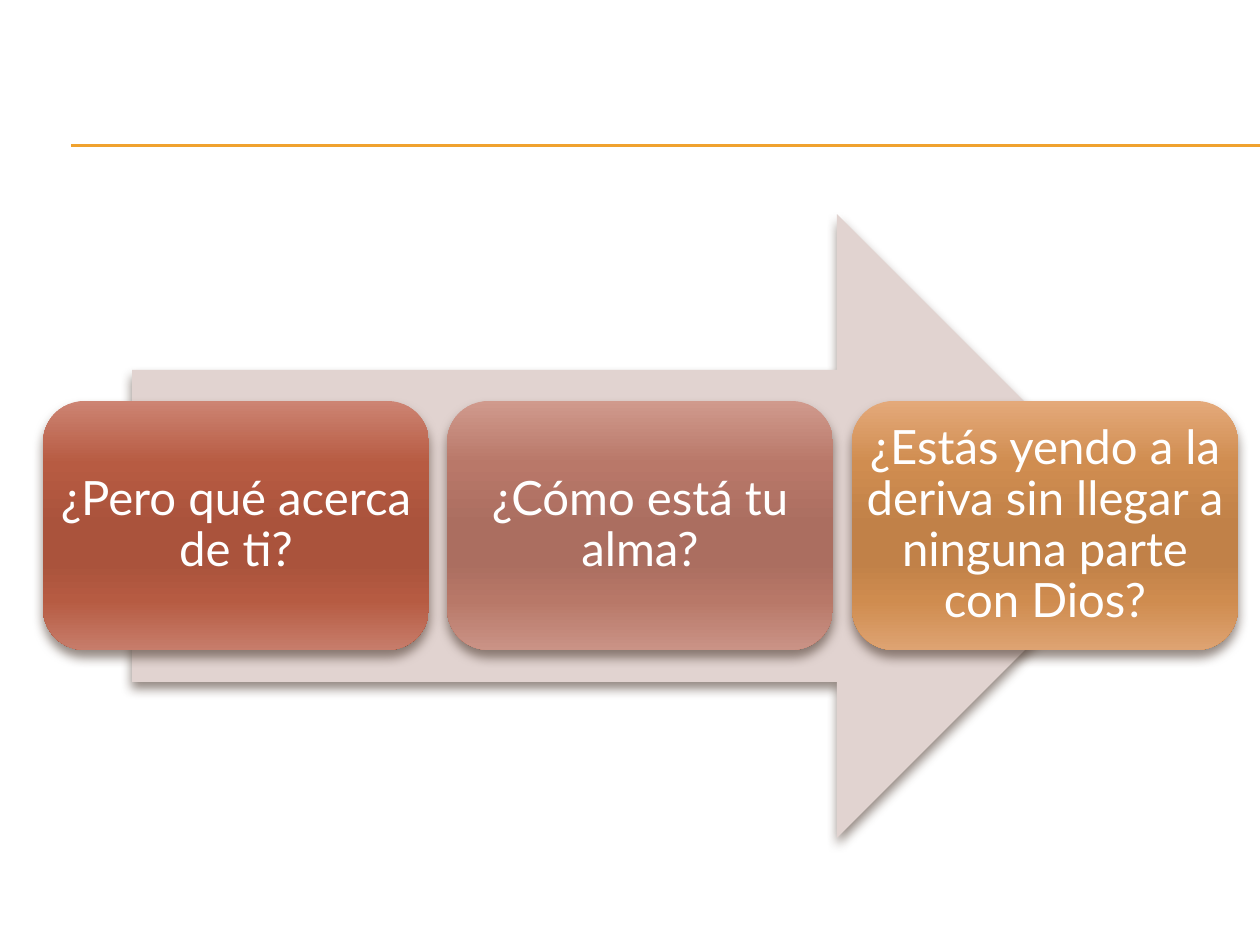
from lxml import etree
from pptx import Presentation
from pptx.dml.color import RGBColor
from pptx.enum.shapes import MSO_CONNECTOR, MSO_SHAPE
from pptx.enum.text import MSO_ANCHOR, PP_ALIGN
from pptx.oxml import parse_xml
from pptx.oxml.ns import nsdecls, qn
from pptx.util import Emu, Pt

LINE = MSO_CONNECTOR.STRAIGHT
ARROW = MSO_SHAPE.RIGHT_ARROW
ROUND = MSO_SHAPE.ROUNDED_RECTANGLE
MIDDLE = MSO_ANCHOR.MIDDLE
CENTER = PP_ALIGN.CENTER

WHITE = RGBColor(0xFF, 0xFF, 0xFF)
GOLD = RGBColor(0xF0, 0xA2, 0x2E)
BLUSH = RGBColor(0xE1, 0xD3, 0xD0)
SHADOW = RGBColor(0x4E, 0x3B, 0x30)
STOPS = (0, 25, 50, 65, 80, 100)
RUST = [RGBColor.from_string(c) for c in
        ("CD8473", "B75B42", "AA533C", "AA533C", "B65B42", "C77D6B")]
ROSE = [RGBColor.from_string(c) for c in
        ("D09A8D", "B97869", "AB6E60", "AB6E60", "B87868", "CA9386")]
AMBER = [RGBColor.from_string(c) for c in
         ("E4A97A", "D08D50", "C18148", "C18148", "CF8C4F", "DEA372")]

QUESTIONS = [
    ("¿Pero qué acerca de ti?", RUST),
    ("¿Cómo está tu alma?", ROSE),
    ("¿Estás yendo a la deriva sin llegar a ninguna parte con Dios?", AMBER),
]


def px(n):
    """Turn slide pixels into EMU."""
    return Emu(round(n * 914400 / 126))


def add_rule(slide, x1, x2, y):
    """Draw a thin horizontal gold line."""
    s = slide.shapes.add_connector(LINE, px(x1), px(y), px(x2), px(y))
    s.line.color.rgb = GOLD
    s.line.width = Pt(0.75)
    etree.SubElement(s._element.spPr, qn("a:effectLst"))


def add_shadow(sp):
    """Give a shape a soft brown shadow below it."""
    sp.shadow.inherit = False
    sp._element.spPr.find(qn("a:effectLst")).append(parse_xml(
        f'<a:outerShdw {nsdecls("a")} blurRad="{Pt(6)}" dist="{Pt(4)}" '
        f'dir="5400000" rotWithShape="0"><a:srgbClr val="{SHADOW}">'
        '<a:alpha val="60000"/></a:srgbClr></a:outerShdw>'))


def fill_gradient(sp, colors):
    """Fill a shape from top to bottom with the given colours."""
    sp.fill.gradient()
    grad = sp._element.spPr.find(qn("a:gradFill"))
    stops = "".join(
        f'<a:gs pos="{pos * 1000}"><a:srgbClr val="{color}"/></a:gs>'
        for pos, color in zip(STOPS, colors))
    grad.getparent().replace(grad, parse_xml(
        f'<a:gradFill {nsdecls("a")} rotWithShape="1"><a:gsLst>{stops}</a:gsLst>'
        '<a:lin ang="5400000" scaled="0"/></a:gradFill>'))


def add_block(slide, kind, x, y, w, h):
    """Add a shape without an outline."""
    sp = slide.shapes.add_shape(kind, px(x), px(y), px(w), px(h))
    sp.line.fill.background()
    return sp


def set_text(sp, text, size=27, color=WHITE, font="Lato", inset=2):
    """Write centred text into a shape."""
    tf = sp.text_frame
    tf.word_wrap = True
    tf.vertical_anchor = MIDDLE
    tf.margin_left = tf.margin_right = px(inset)
    tf.margin_top = tf.margin_bottom = px(inset)
    p = tf.paragraphs[0]
    p.alignment = CENTER
    p.line_spacing = 0.9
    r = p.add_run()
    r.text = text
    r.font.size = Pt(size)
    r.font.name = font
    r.font.color.rgb = color


def add_arrow(slide):
    """Draw the wide arrow behind the questions."""
    sp = add_block(slide, ARROW, 132, 214, 1017, 624)
    sp.fill.solid()
    sp.fill.fore_color.rgb = BLUSH
    add_shadow(sp)


def add_question(slide, x, text, colors):
    """Draw one rounded question box."""
    sp = add_block(slide, ROUND, x, 401, 386, 249)
    fill_gradient(sp, colors)
    add_shadow(sp)
    set_text(sp, text)


def main():
    """Build and save the slide."""
    prs = Presentation()
    prs.slide_width, prs.slide_height = px(1260), px(945)
    slide = prs.slides.add_slide(prs.slide_layouts[6])
    for y in (145, 146):
        add_rule(slide, 71, 1260, y)
    add_arrow(slide)
    for i, (text, colors) in enumerate(QUESTIONS):
        add_question(slide, 43 + i * 809 // 2, text, colors)
    prs.save("out.pptx")


if __name__ == "__main__":
    main()
